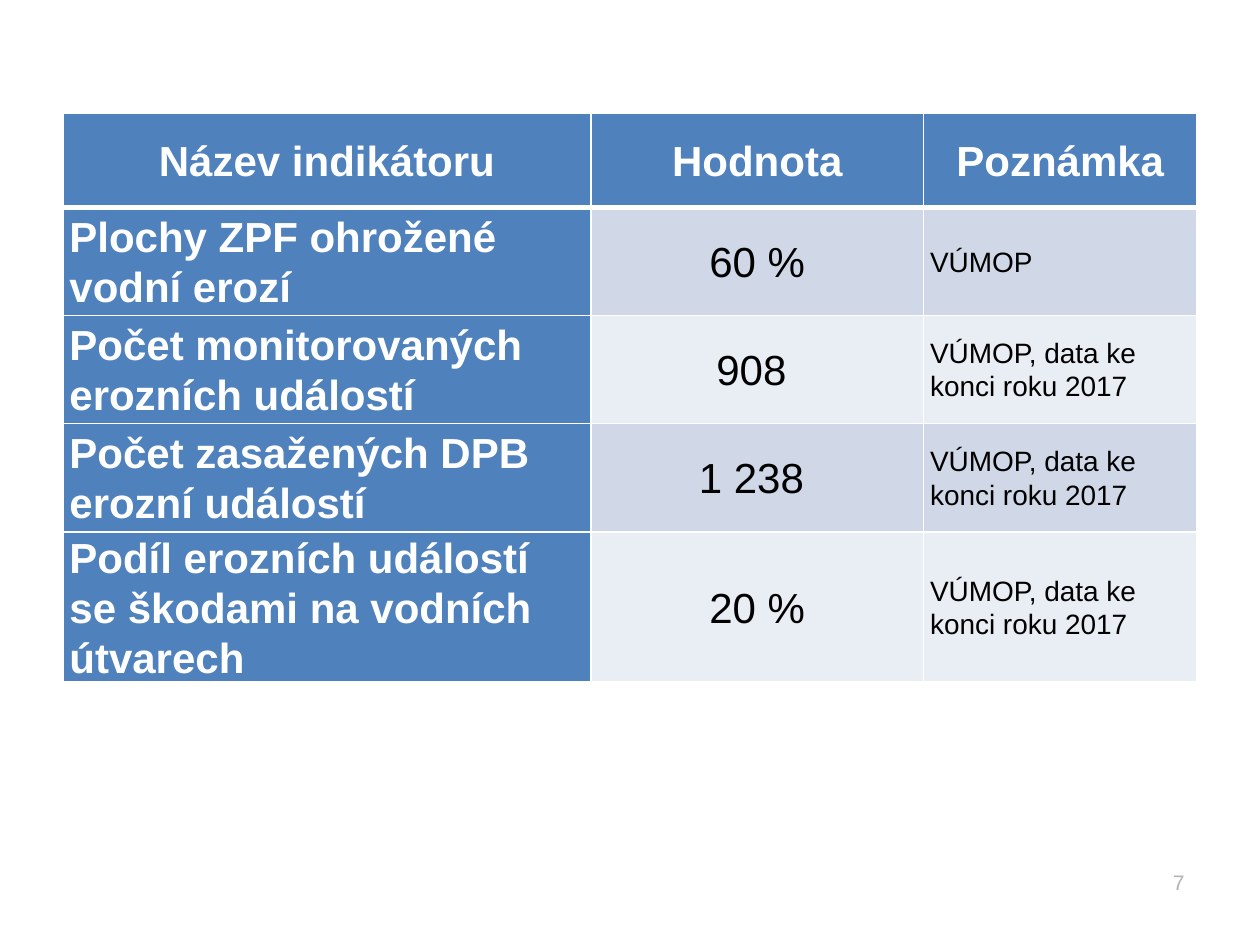
from dataclasses import dataclass

from lxml import etree
from pptx import Presentation
from pptx.dml.color import RGBColor
from pptx.enum.text import MSO_ANCHOR, PP_ALIGN
from pptx.oxml.ns import qn
from pptx.util import Cm, Pt

LEFT, CENTER, RIGHT = PP_ALIGN.LEFT, PP_ALIGN.CENTER, PP_ALIGN.RIGHT
MIDDLE = MSO_ANCHOR.MIDDLE
BLANK_LAYOUT = 6


@dataclass(frozen=True)
class Theme:
    font: str = "Arial"
    accent: str = "4F81BD"
    bands: tuple = ("D0D8E8", "E9EDF4")
    light: str = "FFFFFF"
    dark: str = "000000"
    muted: str = "B3B3B3"
    main_size: int = 24
    note_size: int = 16
    number_size: int = 12
    thin_line: int = 1
    thick_line: int = 3


HEADINGS = ("Název indikátoru", "Hodnota", "Poznámka")
YEAR_NOTE = "VÚMOP, data ke konci roku 2017"
INDICATORS = (
    ("Plochy ZPF ohrožené vodní erozí", "60 %", "VÚMOP"),
    ("Počet monitorovaných erozních událostí", "908 ", YEAR_NOTE),
    ("Počet zasažených DPB erozní událostí", "1 238 ", YEAR_NOTE),
    ("Podíl erozních událostí se škodami na vodních útvarech", "20 %", YEAR_NOTE),
)
COLUMN_WIDTHS = (10.64, 6.71, 5.51)
HEADING_HEIGHT, ROW_HEIGHT = 1.9, 2.18


class SlideBuilder:
    def __init__(self, slide, theme):
        self.slide = slide
        self.theme = theme

    def format_paragraph(self, paragraph, size, color, alignment, bold=False):
        paragraph.alignment = alignment
        paragraph.font.name = self.theme.font
        paragraph.font.size = Pt(size)
        paragraph.font.bold = bold
        paragraph.font.color.rgb = RGBColor.from_string(color)

    def set_borders(self, cell, top, bottom):
        """Draw all four cell borders; top and bottom are widths in points."""
        properties = cell._tc.get_or_add_tcPr()
        thin = self.theme.thin_line
        widths = {"a:lnL": thin, "a:lnR": thin, "a:lnT": top, "a:lnB": bottom}
        for position, (tag, width) in enumerate(widths.items()):
            line = etree.Element(qn(tag), w=str(Pt(width)))
            fill = etree.SubElement(line, qn("a:solidFill"))
            etree.SubElement(fill, qn("a:srgbClr"), val=self.theme.light)
            properties.insert(position, line)

    def fill_cell(self, cell, text, row, column):
        """Style a cell by its place: headings, name column, values or notes."""
        theme = self.theme
        emphasized = row == 0 or column == 0
        fill = theme.accent if emphasized else theme.bands[(row - 1) % 2]
        cell.fill.solid()
        cell.fill.fore_color.rgb = RGBColor.from_string(fill)
        cell.vertical_anchor = MIDDLE
        cell.margin_left = cell.margin_right = Cm(0.13)
        cell.margin_top = cell.margin_bottom = 0
        cell.text = text
        paragraph = cell.text_frame.paragraphs[0]
        paragraph.line_spacing = 1.07
        paragraph.space_after = Pt(8)
        self.format_paragraph(
            paragraph,
            theme.note_size if row and column == 2 else theme.main_size,
            theme.light if emphasized else theme.dark,
            CENTER if row == 0 or column == 1 else LEFT,
            emphasized,
        )
        self.set_borders(
            cell,
            top=theme.thick_line if row == 1 else theme.thin_line,
            bottom=theme.thick_line if row == 0 else theme.thin_line,
        )

    def add_table(self, rows, left, top):
        heights = [HEADING_HEIGHT] + [ROW_HEIGHT] * (len(rows) - 1)
        table = self.slide.shapes.add_table(
            len(rows), len(COLUMN_WIDTHS), Cm(left), Cm(top),
            Cm(sum(COLUMN_WIDTHS)), Cm(sum(heights)),
        ).table
        for column, width in zip(table.columns, COLUMN_WIDTHS):
            column.width = Cm(width)
        for row, height in zip(table.rows, heights):
            row.height = Cm(height)
        for row_index, texts in enumerate(rows):
            for column_index, text in enumerate(texts):
                cell = table.cell(row_index, column_index)
                self.fill_cell(cell, text, row_index, column_index)

    def add_slide_number(self, number, left, top, width, height):
        shape = self.slide.shapes.add_textbox(Cm(left), Cm(top), Cm(width), Cm(height))
        frame = shape.text_frame
        frame.word_wrap = True
        frame.vertical_anchor = MIDDLE
        frame.text = str(number)
        self.format_paragraph(
            frame.paragraphs[0], self.theme.number_size, self.theme.muted, RIGHT
        )


def main():
    presentation = Presentation()
    presentation.slide_width, presentation.slide_height = Cm(25.4), Cm(19.05)
    slide = presentation.slides.add_slide(presentation.slide_layouts[BLANK_LAYOUT])
    builder = SlideBuilder(slide, Theme())
    builder.add_table((HEADINGS, *INDICATORS), left=1.27, top=2.28)
    builder.add_slide_number(7, left=18.2, top=17.27, width=5.93, height=1.02)
    presentation.save("out.pptx")


if __name__ == "__main__":
    main()
